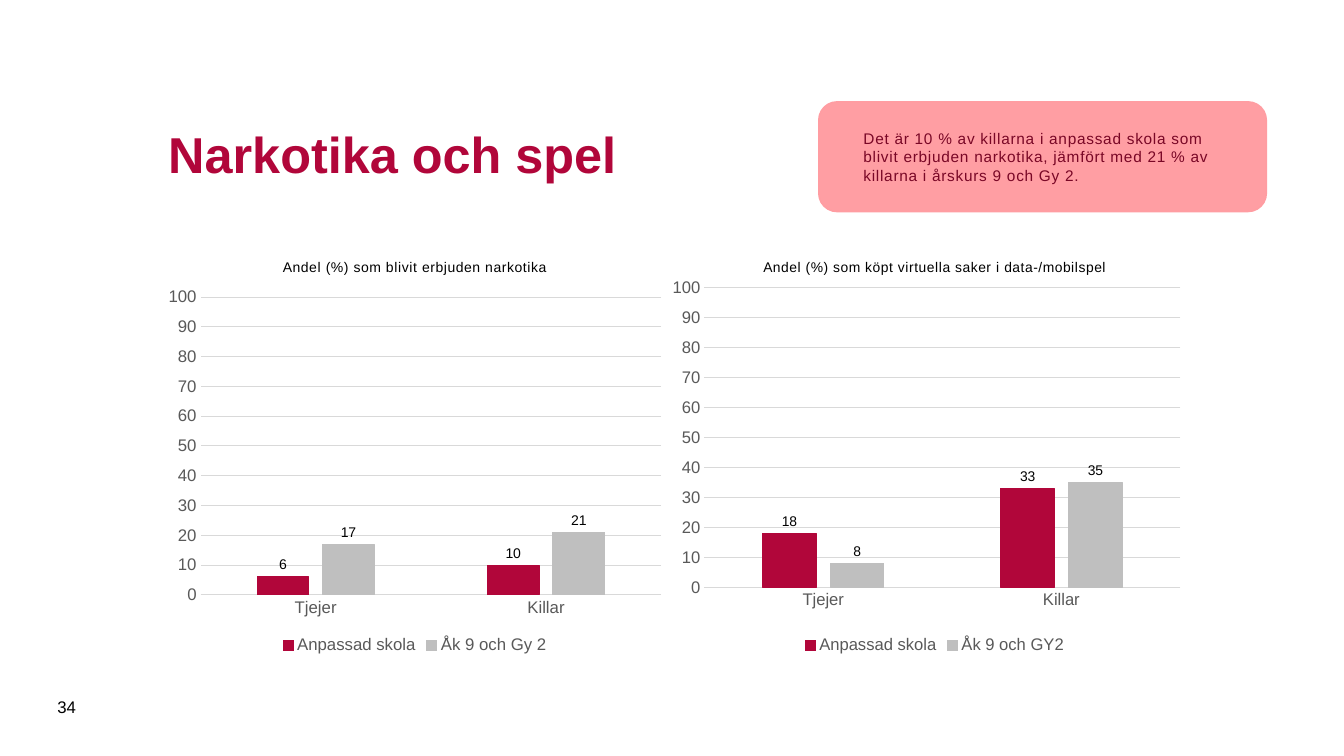
from lxml import etree
from pptx import Presentation
from pptx import util as u
from pptx.chart.data import CategoryChartData
from pptx.dml.color import RGBColor
from pptx.enum import chart as kinds, shapes, text
from pptx.oxml import ns

COLORS = {
    "crimson": "B1063A", "silver": "BFBFBF", "grid": "D9D9D9", "axis": "595959",
    "black": "000000", "pink": "FF9DA2", "wine": "790726",
}
FONT = "Arial"
NUMBER_FORMAT = "#,##0;#,##0"
WIDTH, HEIGHT = u.Inches(13.33), u.Inches(7.5)
COLUMN, ROW = WIDTH / 100, HEIGHT / 100
TRACKING = "50"


def color(name):
    return RGBColor.from_string(COLORS[name])


def place(left, top, width, height):
    """Turn grid columns and rows into lengths."""
    return [int(n * unit) for n, unit in zip((left, top, width, height), (COLUMN, ROW) * 2)]


def apply(target, values):
    for name, value in values.items():
        setattr(target, name, value)


def style_font(font, size, color_name, bold=False):
    apply(font, {"name": FONT, "size": u.Pt(size), "bold": bold})
    font.color.rgb = color(color_name)


def style_line(line, color_name, width):
    line.color.rgb = color(color_name)
    line.width = u.Pt(width)


def write(frame, words, size, color_name, bold=False):
    apply(frame, {"word_wrap": True, "vertical_anchor": text.MSO_ANCHOR.MIDDLE})
    para = frame.paragraphs[0]
    para.alignment = text.PP_ALIGN.LEFT
    span = para.add_run()
    span.text = words
    style_font(span.font, size, color_name, bold)
    return span


def space_letters(span):
    span.font._element.set("spc", TRACKING)


def add_text(page, area, words, size, color_name, bold=False):
    box = page.shapes.add_textbox(*place(*area))
    write(box.text_frame, words, size, color_name, bold)


def add_note(page, area, words):
    note = page.shapes.add_shape(shapes.MSO_SHAPE.ROUNDED_RECTANGLE, *place(*area))
    note.shadow.inherit = False
    note.fill.solid()
    note.fill.fore_color.rgb = color("pink")
    fill_color = note._element.spPr.find(".//" + ns.qn("a:srgbClr"))
    etree.SubElement(fill_color, ns.qn("a:alpha"), val="98000")
    style_line(note.line, "pink", 1)
    side, edge = u.Inches(0.39), u.Inches(0.2)
    apply(note.text_frame, {"margin_left": side, "margin_right": side,
                            "margin_top": edge, "margin_bottom": edge})
    space_letters(write(note.text_frame, words, 11, "wine"))


def set_inner_plot(chart, shares):
    """Fix the inner plot area as shares of the chart: x, y, w, h."""
    area = chart._chartSpace.chart.plotArea
    for old in area.findall(ns.qn("c:layout")):
        area.remove(old)
    layout = etree.Element(ns.qn("c:layout"))
    area.insert(0, layout)
    manual = etree.SubElement(layout, ns.qn("c:manualLayout"))
    settings = [("layoutTarget", "inner"), ("xMode", "edge"), ("yMode", "edge")]
    for name, value in settings + list(zip("xywh", shares)):
        etree.SubElement(manual, ns.qn(f"c:{name}"), val=str(value))


def style_axes(chart):
    for axis in (chart.category_axis, chart.value_axis):
        axis.major_tick_mark = axis.minor_tick_mark = kinds.XL_TICK_MARK.NONE
        style_font(axis.tick_labels.font, 12, "axis")
    style_line(chart.category_axis.format.line, "grid", 0.75)
    values = chart.value_axis
    apply(values, {"minimum_scale": 0, "maximum_scale": 100, "major_unit": 10,
                   "has_major_gridlines": True})
    apply(values.tick_labels, {"number_format": NUMBER_FORMAT,
                               "number_format_is_linked": False})
    values.format.line.fill.background()
    style_line(values.major_gridlines.format.line, "grid", 0.75)


def style_series(series, color_name):
    series.format.fill.solid()
    series.format.fill.fore_color.rgb = color(color_name)
    style_line(series.format.line, color_name, 0.75)
    labels = series.data_labels
    apply(labels, {"show_value": True, "number_format": NUMBER_FORMAT,
                   "number_format_is_linked": False,
                   "position": kinds.XL_LABEL_POSITION.OUTSIDE_END})
    style_font(labels.font, 10, "black")


def add_column_chart(page, area, title, groups, plot_shares=None):
    data = CategoryChartData(number_format=NUMBER_FORMAT)
    data.categories = ["Tjejer", "Killar"]
    for name, values in groups.items():
        data.add_series(name, values)
    chart = page.shapes.add_chart(
        kinds.XL_CHART_TYPE.COLUMN_CLUSTERED, *place(*area), data).chart
    style_font(chart.font, 10, "black")
    chart.has_title = True
    span = chart.chart_title.text_frame.paragraphs[0].add_run()
    span.text = title
    style_font(span.font, 10, "black")
    space_letters(span)
    chart.has_legend = True
    apply(chart.legend, {"position": kinds.XL_LEGEND_POSITION.BOTTOM,
                         "include_in_layout": False})
    style_font(chart.legend.font, 12, "axis")
    style_axes(chart)
    plot = chart.plots[0]
    apply(plot, {"gap_width": 219, "overlap": -27, "vary_by_categories": False})
    for series, color_name in zip(plot.series, ("crimson", "silver")):
        style_series(series, color_name)
    if plot_shares:
        set_inner_plot(chart, plot_shares)


def main():
    deck = Presentation()
    apply(deck, {"slide_width": WIDTH, "slide_height": HEIGHT})
    page = deck.slides.add_slide(deck.slide_layouts[6])
    add_text(page, (11.78, 10.8, 76.82, 18.93), "Narkotika och spel", 36, "crimson", True)
    add_text(page, (3.53, 90.8, 4.28, 5.33), "34", 12, "black")
    add_column_chart(
        page, (11.78, 32, 38.18, 55.07), "Andel (%) som blivit erbjuden narkotika",
        {"Anpassad skola": (6, 10), "Åk 9 och Gy 2": (17, 21)})
    add_column_chart(
        page, (50.04, 32, 38.56, 55.07),
        "Andel (%) som köpt virtuella saker i data-/mobilspel",
        {"Anpassad skola": (18, 33), "Åk 9 och GY2": (8, 35)},
        (0.05, 0.11, 0.93, 0.72))
    add_note(page, (60.92, 13.47, 33.31, 14.53),
             "Det är 10 % av killarna i anpassad skola som blivit erbjuden narkotika, "
             "jämfört med 21 % av killarna i årskurs 9 och Gy 2.")
    deck.save("out.pptx")


if __name__ == "__main__":
    main()
